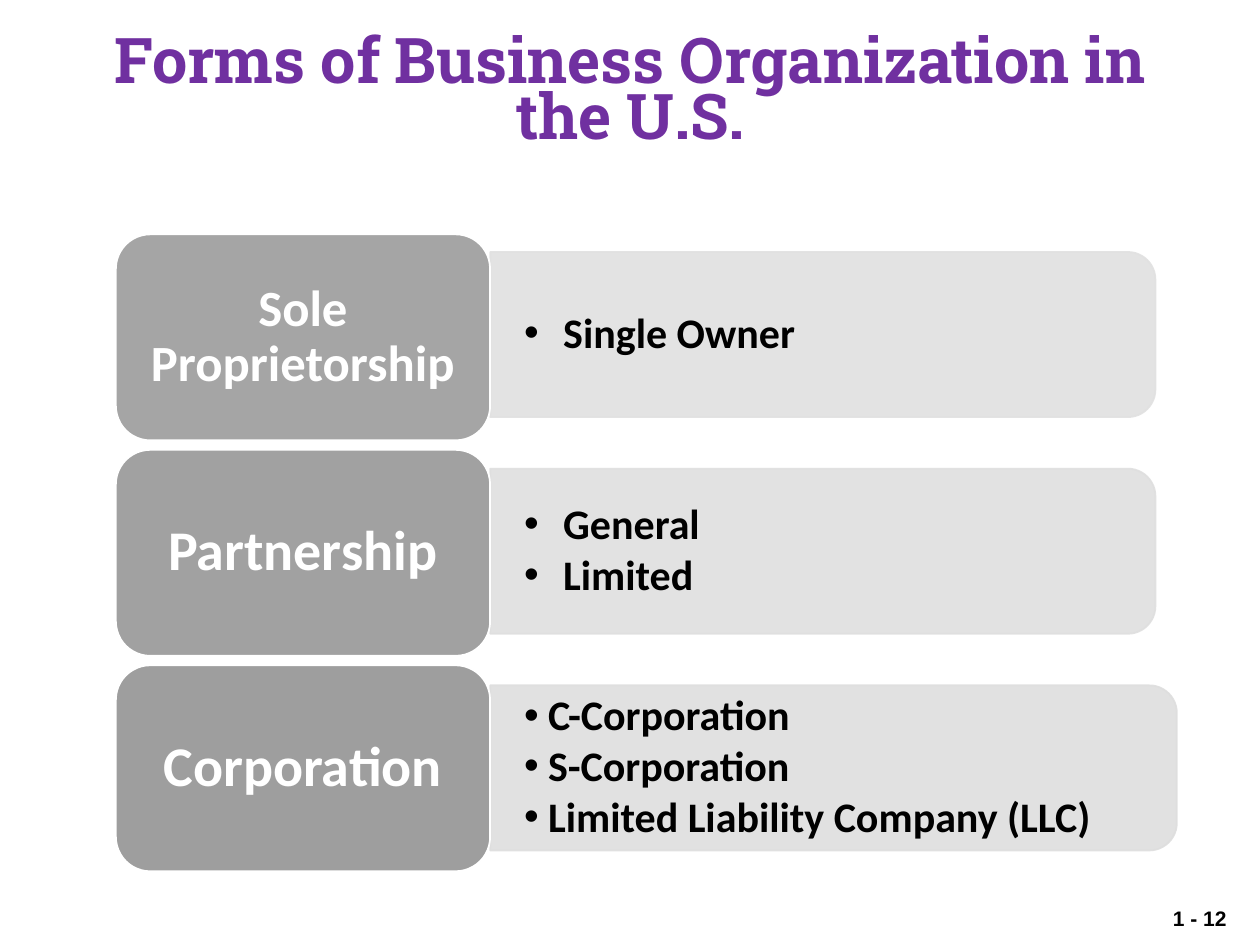
"""Build a slide that lists the forms of business organization in the U.S."""
from math import cos, pi, sin

from lxml.etree import SubElement
from pptx import Presentation
from pptx.dml.color import RGBColor
from pptx.enum.shapes import MSO_SHAPE
from pptx.enum.text import MSO_ANCHOR, MSO_AUTO_SIZE, PP_ALIGN
from pptx.oxml.ns import qn
from pptx.util import Inches, Pt

TITLE = "Forms of Business Organization in the U.S."
PAGE = "1 - 12"
FORMS = [
    {"name": "Sole Proprietorship", "size": 29, "dark": "A5A5A5", "pale": "E1E1E1",
     "width": 52.8, "hang": 0.31, "items": ["Single Owner"]},
    {"name": "Partnership", "size": 32, "dark": "A1A1A1", "pale": "DFDFDF",
     "width": 52.8, "hang": 0.31, "items": ["General", "Limited"]},
    {"name": "Corporation", "size": 32, "dark": "9E9E9E", "pale": "DEDEDE",
     "width": 54.5, "hang": 0.19,
     "items": ["C-Corporation", "S-Corporation", "Limited Liability Company (LLC)"]},
]
THEME = {
    "white": "FFFFFF", "black": "000000", "purple": "7030A0",
    "head": "Roboto Slab", "body": "Calibri", "foot": "Arial",
    "title": 36, "item": 24, "page": 12, "line": 1, "gap": 3, "alpha": 90,
}
WIDE, HIGH = Inches(10), Inches(7.5)
LEFT, SPLIT = 9.2, 38.9
LABEL = {"top": 24.8, "pitch": 22.8, "high": 21.8}
PANEL = {"top": 26.67, "pitch": 22.93, "high": 17.47}
ROUND, STEPS = 1 / 6, 12


def place(left, top, width, height):
    """Turn percentages of the slide into lengths."""
    return (int(WIDE * left / 100), int(HIGH * top / 100),
            int(WIDE * width / 100), int(HIGH * height / 100))


def paint(shape, fill, line=None, alpha=None):
    """Give a shape its fill and line, without a shadow."""
    shape.shadow.inherit = False
    shape.fill.solid()
    shape.fill.fore_color.rgb = RGBColor.from_string(fill)
    if line is None:
        shape.line.fill.background()
        return
    shape.line.width = Pt(THEME["line"])
    shape.line.color.rgb = RGBColor.from_string(line)
    if alpha:
        for color in shape._element.spPr.iter(qn("a:srgbClr")):
            SubElement(color, qn("a:alpha"), val=str(alpha * 1000))


def frame(shape, side, edge, right=None):
    """Set up a wrapped, middle-anchored text frame."""
    text = shape.text_frame
    text.word_wrap = True
    text.vertical_anchor = MSO_ANCHOR.MIDDLE
    text.margin_left = Inches(side)
    text.margin_right = Inches(right or side)
    text.margin_top = text.margin_bottom = Inches(edge)
    return text


def write(para, words, font, size, color, align=PP_ALIGN.LEFT, space=1.0):
    """Add one bold run to a paragraph."""
    para.alignment = align
    para.line_spacing = space
    run = para.add_run()
    run.text = words
    run.font.name = font
    run.font.size = Pt(size)
    run.font.bold = True
    run.font.color.rgb = RGBColor.from_string(color)


def bullet(para, hang):
    """Give a paragraph a hanging bullet."""
    props = para._p.get_or_add_pPr()
    props.set("marL", str(Inches(hang)))
    props.set("indent", str(-Inches(hang)))
    SubElement(props, qn("a:buFont"), typeface=THEME["foot"])
    SubElement(props, qn("a:buChar"), char="•")


def panel(slide, row, form):
    """Draw the list panel, rounded on its right side only."""
    left, top, width, height = place(
        SPLIT, PANEL["top"] + row * PANEL["pitch"], form["width"], PANEL["high"])
    edge, base, curve = left + width, top + height, height * ROUND
    turns = [step * pi / 2 / STEPS for step in range(STEPS + 1)]
    upper = [(int(edge - curve + curve * sin(turn)),
              int(top + curve - curve * cos(turn))) for turn in turns]
    lower = [(x, top + base - y) for x, y in reversed(upper)]
    path = slide.shapes.build_freeform(left, top)
    path.add_line_segments(upper + lower + [(left, base)], close=True)
    shape = path.convert_to_shape()
    paint(shape, form["pale"], form["pale"], THEME["alpha"])
    text = frame(shape, 0.27, 0.2, 0.33)
    for spot, item in enumerate(form["items"]):
        para = text.add_paragraph() if spot else text.paragraphs[0]
        para.space_after = Pt(THEME["gap"])
        bullet(para, form["hang"])
        write(para, item, THEME["body"], THEME["item"], THEME["black"], space=0.9)


def label(slide, row, form):
    """Draw the rounded box that names a form."""
    spot = place(LEFT, LABEL["top"] + row * LABEL["pitch"], SPLIT - LEFT, LABEL["high"])
    shape = slide.shapes.add_shape(MSO_SHAPE.ROUNDED_RECTANGLE, *spot)
    shape.adjustments[0] = ROUND
    paint(shape, form["dark"], THEME["white"])
    write(frame(shape, 0.12, 0.07).paragraphs[0], form["name"], THEME["body"],
          form["size"], THEME["white"], PP_ALIGN.CENTER, 0.9)


def main():
    """Build and save the slide."""
    deck = Presentation()
    deck.slide_width, deck.slide_height = WIDE, HIGH
    slide = deck.slides.add_slide(deck.slide_layouts[6])
    foot = slide.shapes.add_textbox(*place(92.1, 95.2, 6.5, 4)).text_frame
    foot.word_wrap = False
    foot.auto_size = MSO_AUTO_SIZE.SHAPE_TO_FIT_TEXT
    write(foot.paragraphs[0], PAGE, THEME["foot"], THEME["page"], THEME["black"])
    head = slide.shapes.add_shape(MSO_SHAPE.RECTANGLE, *place(6.9, 3.33, 86.2, 13.33))
    paint(head, THEME["white"])
    write(frame(head, 0.1, 0.05).paragraphs[0], TITLE, THEME["head"],
          THEME["title"], THEME["purple"], PP_ALIGN.CENTER, 0.75)
    for row, form in enumerate(FORMS):
        panel(slide, row, form)
        label(slide, row, form)
    deck.save("out.pptx")


if __name__ == "__main__":
    main()
